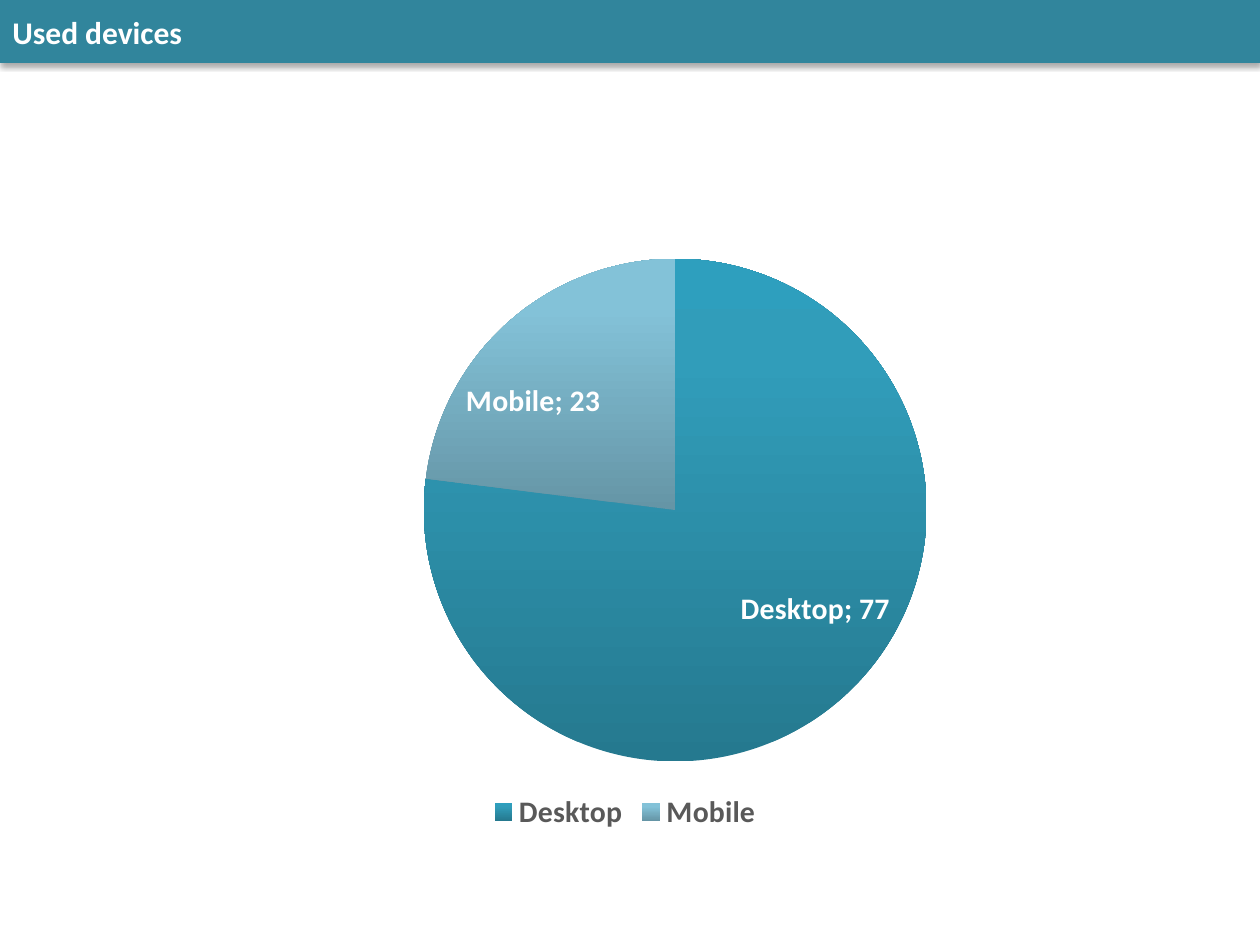
from copy import deepcopy
from dataclasses import dataclass

from lxml import etree
from pptx import Presentation
from pptx import util as u
from pptx.chart.data import CategoryChartData
from pptx.dml.color import RGBColor
from pptx.enum import chart as ch, shapes, text
from pptx.oxml import parse_xml
from pptx.oxml.ns import nsdecls, qn

FONT = "Calibri"
STOPS = (0, 0.8, 1)


@dataclass
class Slice:
    name: str
    value: int
    shades: tuple[str, str, str]  # bottom to top


SLICES = [
    Slice("Desktop", 77, ("25798F", "319DBA", "2E9FBE")),
    Slice("Mobile", 23, ("6595A6", "83C2D8", "82C4DB")),
]


def paint(color, code: str) -> None:
    color.rgb = RGBColor.from_string(code)


def style(font, size: float, code: str) -> None:
    font.name, font.size, font.bold = FONT, u.Pt(size), True
    paint(font.color, code)


def banner(slide, title: str) -> None:
    bar = slide.shapes.add_shape(
        shapes.MSO_SHAPE.RECTANGLE, 0, 0, u.Cm(25.4), u.Cm(1.27))
    bar.fill.solid()
    paint(bar.fill.fore_color, "31859C")
    bar.line.fill.background()
    # Soft shadow below the bar
    bar._element.spPr.append(parse_xml(
        f'<a:effectLst {nsdecls("a")}><a:outerShdw blurRad="40000" dist="23000"'
        ' dir="5400000" rotWithShape="0"><a:srgbClr val="000000">'
        '<a:alpha val="35000"/></a:srgbClr></a:outerShdw></a:effectLst>'))
    frame = bar.text_frame
    frame.vertical_anchor = text.MSO_ANCHOR.MIDDLE
    par = frame.paragraphs[0]
    par.text, par.alignment = title, text.PP_ALIGN.LEFT
    style(par.font, 18, "FFFFFF")


def shade(chart, index: int, part: Slice) -> None:
    form = chart.plots[0].series[0].points[index].format
    form.line.fill.background()
    form.fill.gradient()
    form.fill.gradient_angle = 90
    # A new gradient has two stops; add the third
    stops = chart._chartSpace.xpath(".//a:gsLst")[index]
    stops.append(deepcopy(stops[0]))
    for stop, place, code in zip(form.fill.gradient_stops, STOPS, part.shades):
        stop.position = place
        paint(stop.color, code)


def place(chart, **box: float) -> None:
    """Fix the inner plot area as fractions of the chart."""
    area = chart._chartSpace.chart.plotArea
    for old in area.findall(qn("c:layout")):
        area.remove(old)
    layout = etree.Element(qn("c:layout"))
    manual = etree.SubElement(layout, qn("c:manualLayout"))
    rules = dict(layoutTarget="inner", xMode="edge", yMode="edge", **box)
    for tag, val in rules.items():
        etree.SubElement(manual, qn(f"c:{tag}")).set("val", str(val))
    area.insert(0, layout)


def pie(slide, parts: list[Slice]) -> None:
    data = CategoryChartData()
    data.categories = [part.name for part in parts]
    data.add_series("Series 1", [part.value for part in parts])
    chart = slide.shapes.add_chart(
        ch.XL_CHART_TYPE.PIE, u.Cm(5.36), u.Cm(4.57), u.Cm(14.48), u.Cm(12.29),
        data).chart
    chart.has_title = False
    style(chart.font, 17, "000000")
    place(chart, x=0.22, y=0.05, w=0.7, h=0.83)
    for index, part in enumerate(parts):
        shade(chart, index, part)

    # Legend
    chart.has_legend = True
    chart.legend.position = ch.XL_LEGEND_POSITION.BOTTOM
    chart.legend.include_in_layout = False
    style(chart.legend.font, 17, "595959")

    # Labels
    labels = chart.plots[0].series[0].data_labels
    labels.show_category_name = labels.show_value = True
    labels.position = ch.XL_LABEL_POSITION.BEST_FIT
    style(labels.font, 17, "FFFFFF")


def main() -> None:
    deck = Presentation()
    deck.slide_width, deck.slide_height = u.Cm(25.4), u.Cm(19.05)
    slide = deck.slides.add_slide(deck.slide_layouts[6])
    banner(slide, "Used devices")
    pie(slide, SLICES)
    deck.save("out.pptx")


if __name__ == "__main__":
    main()
